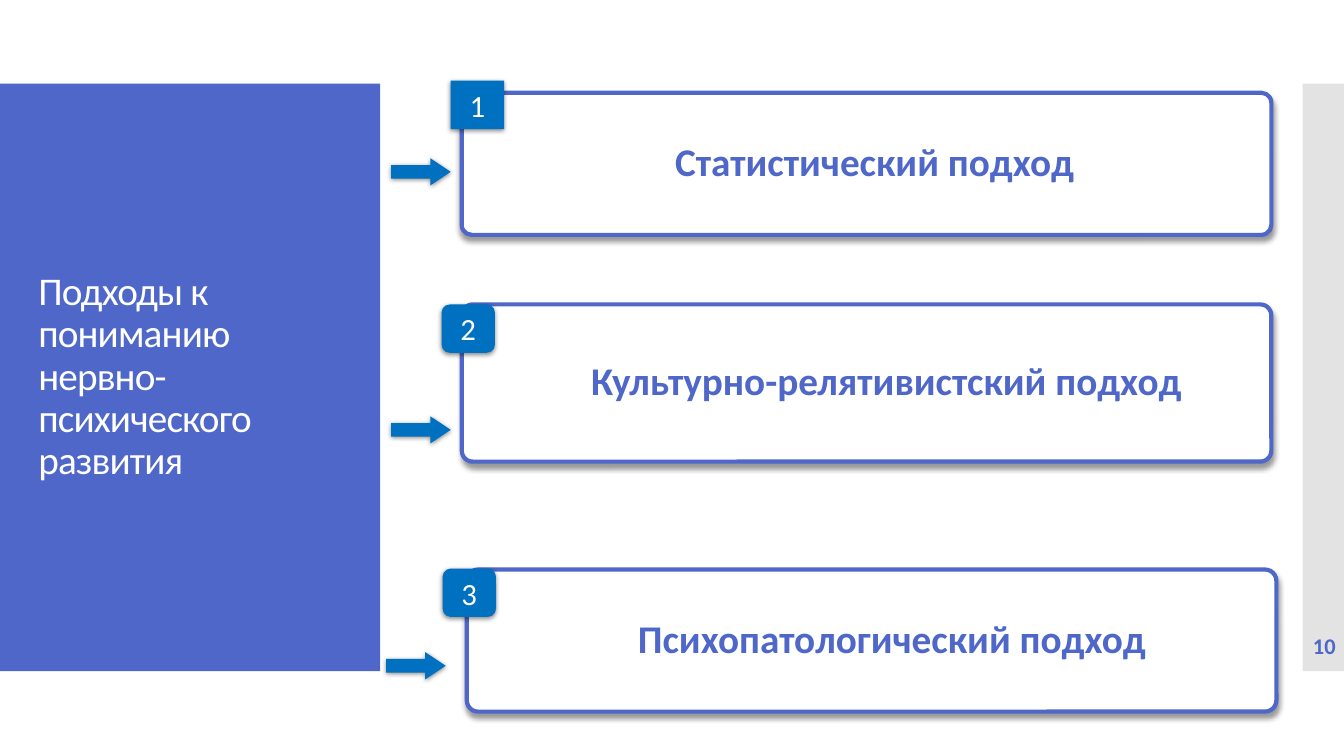
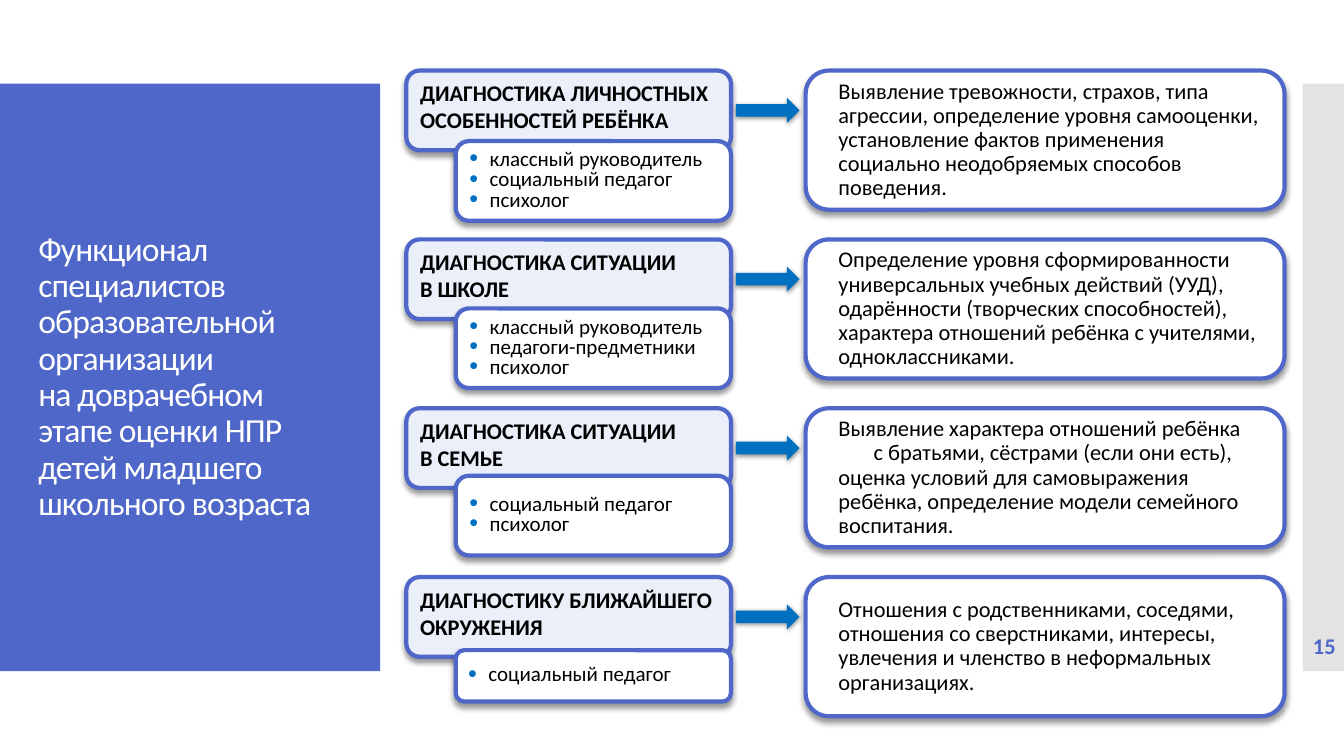
from dataclasses import dataclass
from typing import Optional, Sequence

from lxml import etree
from pptx import Presentation
from pptx import util as u
from pptx.dml.color import RGBColor
from pptx.enum import shapes, text
from pptx.oxml.ns import qn

INDIGO = RGBColor(0x4E, 0x67, 0xC8)
BLUE = RGBColor(0x00, 0x70, 0xC0)
PALE = RGBColor(0xEB, 0xEF, 0xF9)
GREY = RGBColor(0xC8, 0xC8, 0xC8)
WHITE = RGBColor(0xFF, 0xFF, 0xFF)
BLACK = RGBColor(0x00, 0x00, 0x00)
FONT = "Calibri"

RECT = shapes.MSO_SHAPE.RECTANGLE
ROUND = shapes.MSO_SHAPE.ROUNDED_RECTANGLE
ARROW = shapes.MSO_SHAPE.RIGHT_ARROW
LEFT, CENTER = text.PP_ALIGN.LEFT, text.PP_ALIGN.CENTER
TOP, MIDDLE = text.MSO_ANCHOR.TOP, text.MSO_ANCHOR.MIDDLE


@dataclass(frozen=True)
class Box:
    left: float
    top: float
    width: float
    height: float

    def lengths(self) -> list:
        return [u.Inches(v) for v in (self.left, self.top, self.width, self.height)]


@dataclass(frozen=True)
class Shadow:
    opacity: int
    blur: float
    distance: float


@dataclass(frozen=True)
class Look:
    fill: RGBColor
    outline: Optional[RGBColor] = None
    shadow: Optional[Shadow] = None


@dataclass(frozen=True)
class TextStyle:
    size: float
    color: RGBColor = BLACK
    bold: bool = False
    align: text.PP_ALIGN = LEFT
    anchor: text.MSO_ANCHOR = MIDDLE
    spacing: float = 1.0
    margin: float = 0
    indent: float = 0
    tracking: float = 0
    bullet: bool = False


@dataclass(frozen=True)
class Approach:
    name: str
    card: Box
    card_radius: float
    margin: float
    arrow: tuple
    badge: tuple
    badge_radius: float


@dataclass(frozen=True)
class Diagnosis:
    heading: str
    staff: str
    staff_top: float
    staff_height: float
    goal: str
    continued: str = ""


CARD_SHADOW = Shadow(40, 4, 3)
ACCENT_SHADOW = Shadow(45, 3.5, 1.1)
CARD = Look(WHITE, INDIGO, CARD_SHADOW)
HEADING_CARD = Look(PALE, INDIGO, CARD_SHADOW)
ACCENT = Look(BLUE, shadow=ACCENT_SHADOW)

NUMBER_STYLE = TextStyle(16, INDIGO, bold=True, align=CENTER)
BADGE_STYLE = TextStyle(22, WHITE, align=CENTER)
HEADING_STYLE = TextStyle(16, bold=True, anchor=TOP)
STAFF_STYLE = TextStyle(15, spacing=0.8, margin=0.2, indent=-0.2, bullet=True)
GOAL_STYLE = TextStyle(16, spacing=0.9, margin=0.16)

APPROACHES = [
    Approach("Статистический подход", Box(4.58, 0.92, 8.03, 1.41), 0.07, 0.16,
             (3.88, 1.57), (4.47, 0.8), 0),
    Approach("Культурно-релятивистский подход", Box(4.58, 3.02, 8.03, 1.56), 0.07, 0.39,
             (3.88, 4.13), (4.38, 3.02), 0.17),
    Approach("Психопатологический подход", Box(4.63, 5.65, 8.03, 1.41), 0.08, 0.4,
             (3.83, 6.47), (4.39, 5.64), 0.17),
]

DIAGNOSES = [
    Diagnosis("ДИАГНОСТИКА ЛИЧНОСТНЫХ ОСОБЕННОСТЕЙ РЕБЁНКА",
              "классный руководитель\nсоциальный педагог\nпсихолог", 1.4, 0.79,
              "Выявление тревожности, страхов, типа агрессии, определение уровня "
              "самооценки, установление фактов применения социально неодобряемых "
              "способов поведения."),
    Diagnosis("ДИАГНОСТИКА СИТУАЦИИ\nВ ШКОЛЕ",
              "классный руководитель\nпедагоги-предметники\nпсихолог", 3.06, 0.79,
              "Определение уровня сформированности универсальных учебных действий "
              "(УУД), одарённости (творческих способностей), характера отношений "
              "ребёнка с учителями, одноклассниками."),
    Diagnosis("ДИАГНОСТИКА СИТУАЦИИ\nВ СЕМЬЕ",
              "социальный педагог\nпсихолог", 4.72, 0.79,
              "Выявление характера отношений ребёнка",
              "с братьями, сёстрами (если они есть), оценка условий для самовыражения "
              "ребёнка, определение модели семейного воспитания."),
    Diagnosis("ДИАГНОСТИКУ БЛИЖАЙШЕГО ОКРУЖЕНИЯ",
              "социальный педагог", 6.45, 0.51,
              "Отношения с родственниками, соседями, отношения со сверстниками, "
              "интересы, увлечения и членство в неформальных организациях."),
]
FIRST_ROW, ROW_PITCH = 0.7, 1.675


def add_effect(shape, shadow: Shadow) -> None:
    """Give a shape a soft shadow falling straight down."""
    effects = shape.element.spPr.find(qn("a:effectLst"))
    outer = etree.SubElement(effects, qn("a:outerShdw"), blurRad=str(u.Pt(shadow.blur)),
                             dist=str(u.Pt(shadow.distance)), dir="5400000",
                             algn="ctr", rotWithShape="0")
    color = etree.SubElement(outer, qn("a:srgbClr"), val=str(BLACK))
    etree.SubElement(color, qn("a:alpha"), val=str(shadow.opacity * 1000))


def add_block(slide, kind, box: Box, look: Look, adjust: Sequence[float] = ()):
    shape = slide.shapes.add_shape(kind, *box.lengths())
    for i, value in enumerate(adjust):
        shape.adjustments[i] = value
    shape.shadow.inherit = False
    shape.fill.solid()
    shape.fill.fore_color.rgb = look.fill
    if look.outline is None:
        shape.line.fill.background()
    else:
        shape.line.color.rgb = look.outline
        shape.line.width = u.Pt(3)
    if look.shadow:
        add_effect(shape, look.shadow)
    return shape


def format_paragraph(paragraph, style: TextStyle) -> None:
    paragraph.alignment = style.align
    paragraph.line_spacing = style.spacing
    properties = paragraph._p.get_or_add_pPr()
    properties.set("marL", str(u.Inches(style.margin)))
    properties.set("indent", str(u.Inches(style.indent)))
    if style.bullet:
        color = etree.SubElement(properties, qn("a:buClr"))
        etree.SubElement(color, qn("a:srgbClr"), val=str(BLUE))
        etree.SubElement(properties, qn("a:buSzPct"), val="120000")
        etree.SubElement(properties, qn("a:buFont"), typeface="Arial")
        etree.SubElement(properties, qn("a:buChar"), char="•")
    for run in paragraph.runs:
        run.font.name = FONT
        run.font.size = u.Pt(style.size)
        run.font.bold = style.bold
        run.font.color.rgb = style.color
        if style.tracking:
            run.font._element.set("spc", str(round(style.tracking * 100)))


def write(shape, wording: str, style: TextStyle) -> None:
    frame = shape.text_frame
    frame.text = wording
    frame.word_wrap = True
    frame.auto_size = text.MSO_AUTO_SIZE.NONE
    frame.vertical_anchor = style.anchor
    for paragraph in frame.paragraphs:
        format_paragraph(paragraph, style)


def add_bands(slide, layout) -> None:
    """Put the side bands on the layout, behind its title."""
    title = layout.placeholders[0]
    title.left, title.top, title.width, title.height = Box(0.28, 1.23, 3.22, 5.03).lengths()
    title_band = add_block(slide, RECT, Box(0, 0.83, 3.77, 5.83), Look(INDIGO))
    number_band = add_block(slide, RECT, Box(12.92, 0.83, 0.42, 5.83), Look(GREY))
    tint = number_band.element.spPr.find(qn("a:solidFill"))[0]
    etree.SubElement(tint, qn("a:alpha"), val="50000")
    for band in (title_band, number_band):
        title.element.addprevious(band.element)


def add_frame(slide, title: str, size: float, number: int) -> None:
    """Fill in the title and the page number."""
    write(slide.shapes.title, title, TextStyle(size, WHITE, spacing=0.9, tracking=-0.6))
    page = slide.shapes.add_textbox(*Box(12.93, 6.2, 0.41, 0.4).lengths())
    frame = page.text_frame
    frame.margin_left = frame.margin_right = frame.margin_top = frame.margin_bottom = 0
    write(page, str(number), NUMBER_STYLE)


def draw_approach(slide, number: int, item: Approach) -> None:
    card = add_block(slide, ROUND, item.card, CARD, [item.card_radius])
    write(card, item.name, TextStyle(28, INDIGO, bold=True, align=CENTER,
                                     spacing=0.9, margin=item.margin))
    add_block(slide, ARROW, Box(*item.arrow, 0.59, 0.27), ACCENT, [0.5, 0.75])
    badge = add_block(slide, ROUND, Box(*item.badge, 0.53, 0.48), ACCENT, [item.badge_radius])
    write(badge, str(number), BADGE_STYLE)


def draw_diagnosis(slide, top: float, item: Diagnosis) -> None:
    heading = add_block(slide, ROUND, Box(4.03, top, 3.22, 0.79), HEADING_CARD)
    write(heading, item.heading, HEADING_STYLE)
    staff = add_block(slide, ROUND, Box(4.52, item.staff_top, 2.73, item.staff_height), CARD)
    write(staff, item.staff, STAFF_STYLE)
    goal = add_block(slide, ROUND, Box(7.99, top, 4.75, 1.38), CARD)
    write(goal, item.goal, GOAL_STYLE)
    if item.continued:
        rest = goal.text_frame.add_paragraph()
        rest.text = item.continued
        format_paragraph(rest, TextStyle(16, spacing=0.9, margin=0.16, indent=0.35))
    add_block(slide, ARROW, Box(7.3, top + 0.27, 0.63, 0.25), ACCENT, [0.5, 0.5])


def main() -> None:
    deck = Presentation()
    deck.slide_width, deck.slide_height = u.Inches(13.33), u.Inches(7.5)
    layout = deck.slide_layouts[5]

    # Approaches
    approaches = deck.slides.add_slide(layout)
    add_bands(approaches, layout)
    add_frame(approaches, "Подходы к пониманию \vнервно-психического развития", 28, 10)
    for number, approach in enumerate(APPROACHES, start=1):
        draw_approach(approaches, number, approach)

    # Specialists and what they diagnose
    specialists = deck.slides.add_slide(layout)
    add_frame(specialists, "Функционал специалистов образовательной организации \v"
              "на доврачебном этапе оценки НПР детей младшего школьного возраста", 24, 15)
    for row, diagnosis in enumerate(DIAGNOSES):
        draw_diagnosis(specialists, FIRST_ROW + row * ROW_PITCH, diagnosis)

    deck.save("out.pptx")


if __name__ == "__main__":
    main()
